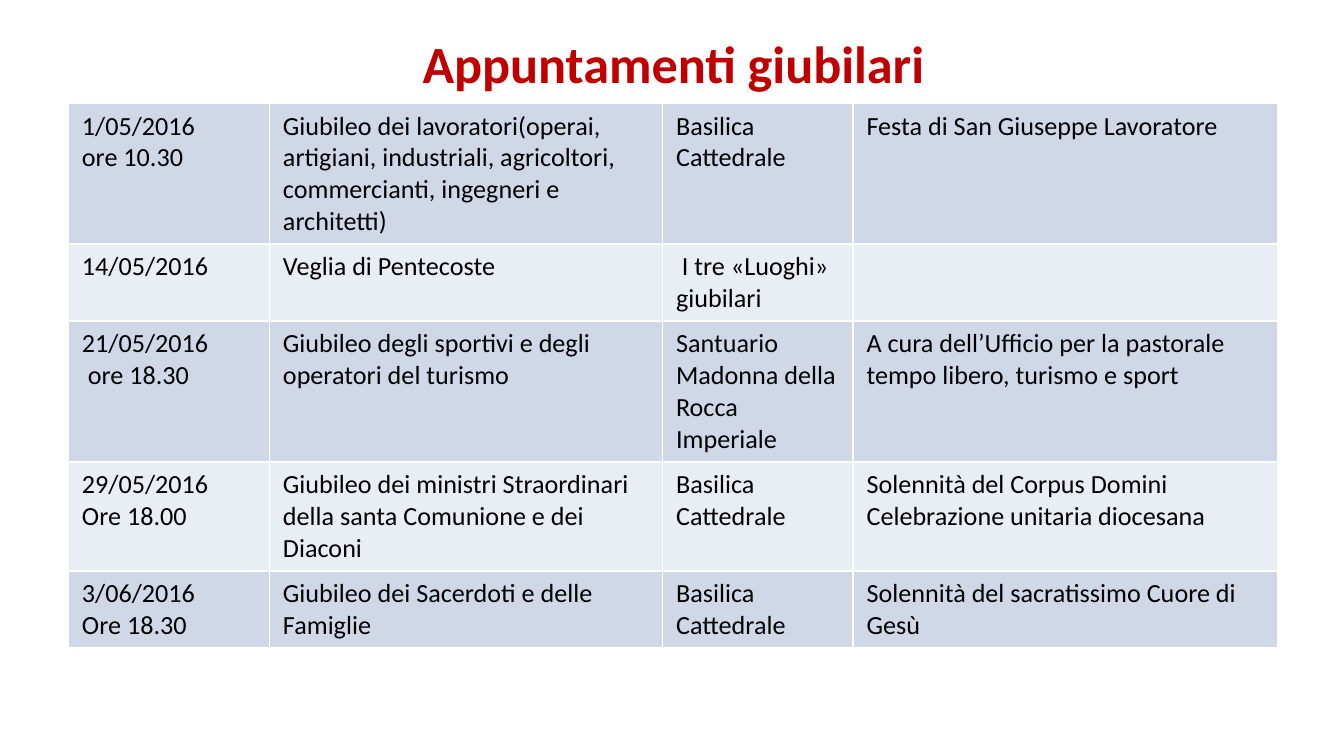
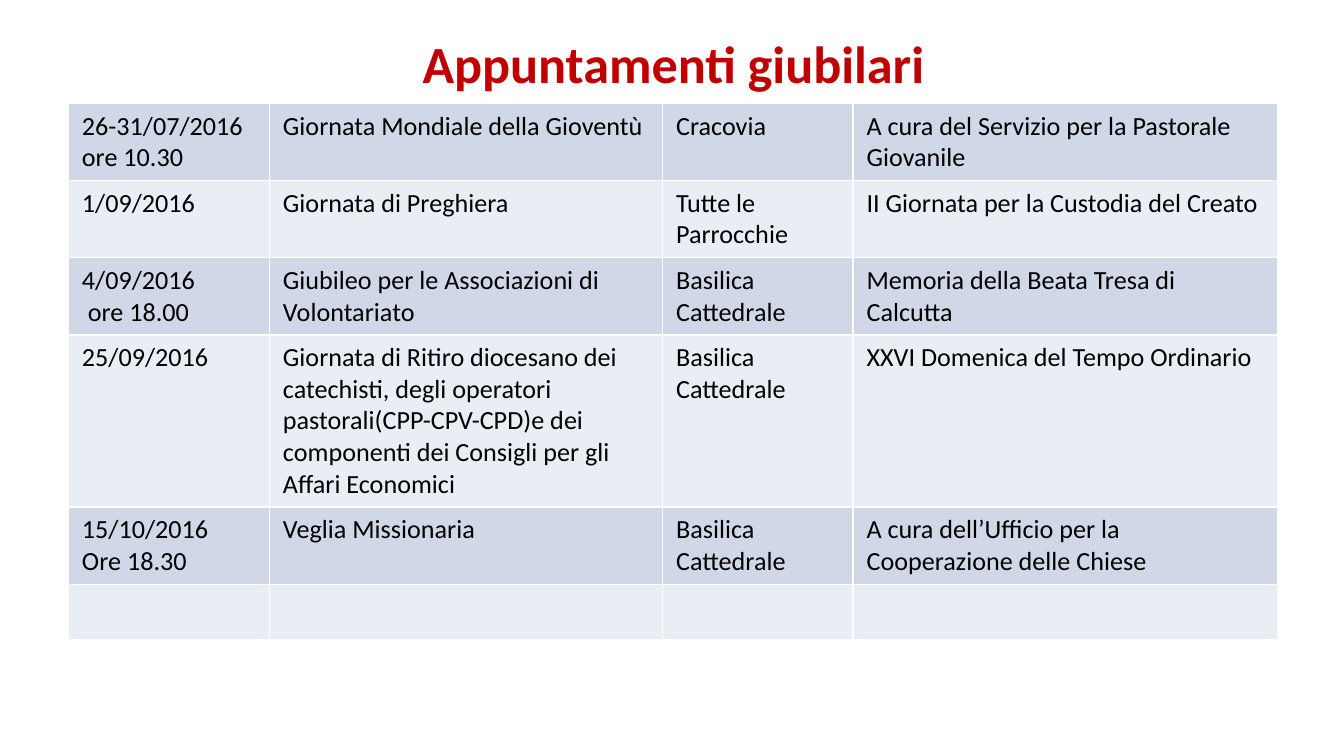
"""Build two slides that list the jubilee dates in banded tables."""
from pptx import Presentation
from pptx.dml.color import RGBColor
from pptx.enum.text import MSO_ANCHOR, PP_ALIGN
from pptx.util import Inches, Pt

MIDDLE = MSO_ANCHOR.MIDDLE
CENTER = PP_ALIGN.CENTER
WIDE = 10
HIGH = WIDE * 9 / 16
SPAN = 0.9 * WIDE
LEFT = 0.51
COLS = [16.62, 32.5, 15.75, 35.13]
ROW = 0.41
BANDS = ["D0D8E8", "E9EDF4"]
TITLE = {"name": "Calibri", "size": Pt(28), "bold": True}
BODY = {"name": "Calibri", "size": Pt(14), "bold": False}
CHURCH = "Basilica Cattedrale"

PAGES = [
    [
        ("1/05/2016\nore 10.30",
         "Giubileo dei lavoratori(operai, artigiani, industriali, agricoltori, "
         "commercianti, ingegneri e architetti)",
         CHURCH, "Festa di San Giuseppe Lavoratore"),
        ("14/05/2016", "Veglia di Pentecoste", " I tre «Luoghi» giubilari", ""),
        ("21/05/2016\n ore 18.30",
         "Giubileo degli sportivi e degli operatori del turismo",
         "Santuario Madonna della Rocca Imperiale",
         "A cura dell’Ufficio per la pastorale tempo libero, turismo e sport"),
        ("29/05/2016\nOre 18.00",
         "Giubileo dei ministri Straordinari della santa Comunione e dei Diaconi",
         CHURCH, "Solennità del Corpus Domini Celebrazione unitaria diocesana"),
        ("3/06/2016\nOre 18.30", "Giubileo dei Sacerdoti e delle Famiglie",
         CHURCH, "Solennità del sacratissimo Cuore di Gesù"),
    ],
    [
        ("26-31/07/2016\nore 10.30", "Giornata Mondiale della Gioventù",
         "Cracovia", "A cura del Servizio per la Pastorale Giovanile"),
        ("1/09/2016", "Giornata di Preghiera", "Tutte le Parrocchie",
         "II Giornata per la Custodia del Creato"),
        ("4/09/2016\n ore 18.00", "Giubileo per le Associazioni di Volontariato",
         CHURCH, "Memoria della Beata Tresa di Calcutta"),
        ("25/09/2016",
         "Giornata di Ritiro diocesano dei catechisti, degli operatori "
         "pastorali(CPP-CPV-CPD)e dei componenti dei Consigli per gli "
         "Affari Economici",
         CHURCH, "XXVI Domenica del Tempo Ordinario"),
        ("15/10/2016\nOre 18.30", "Veglia Missionaria",
         CHURCH, "A cura dell’Ufficio per la Cooperazione delle Chiese"),
        ("", "", "", ""),
    ],
]


def paint(part, shade):
    """Give a font or a fill its colour from a hex string."""
    if hasattr(part, "solid"):
        part.solid()
        part.fore_color.rgb = RGBColor.from_string(shade)
    else:
        part.color.rgb = RGBColor.from_string(shade)


def style(par, form, shade):
    """Set the font of a paragraph's runs from a dict of format values."""
    for run in par.runs:
        for key, value in form.items():
            setattr(run.font, key, value)
        paint(run.font, shade)


deck = Presentation()
deck.slide_width, deck.slide_height = Inches(WIDE), Inches(HIGH)

for rows in PAGES:
    slide = deck.slides.add_slide(deck.slide_layouts[5])
    title = slide.shapes.title
    place = {"left": LEFT, "top": 0, "width": SPAN, "height": HIGH / 6}
    for key, value in place.items():
        setattr(title, key, Inches(value))
    title.text_frame.text = "Appuntamenti giubilari"
    title.text_frame.vertical_anchor = MIDDLE
    head = title.text_frame.paragraphs[0]
    head.alignment = CENTER
    style(head, TITLE, "C00000")

    frame = slide.shapes.add_table(
        len(rows), len(COLS), Inches(LEFT), Inches(0.77),
        Inches(SPAN), Inches(ROW * len(rows)))
    table = frame.table
    table.first_row = False
    for col, share in zip(table.columns, COLS):
        col.width = Inches(SPAN * share / 100)
    for r, texts in enumerate(rows):
        table.rows[r].height = Inches(ROW)
        for c, text in enumerate(texts):
            cell = table.cell(r, c)
            paint(cell.fill, BANDS[r % 2])
            if text:
                cell.text = text
                for par in cell.text_frame.paragraphs:
                    style(par, BODY, "000000")

deck.save("out.pptx")
